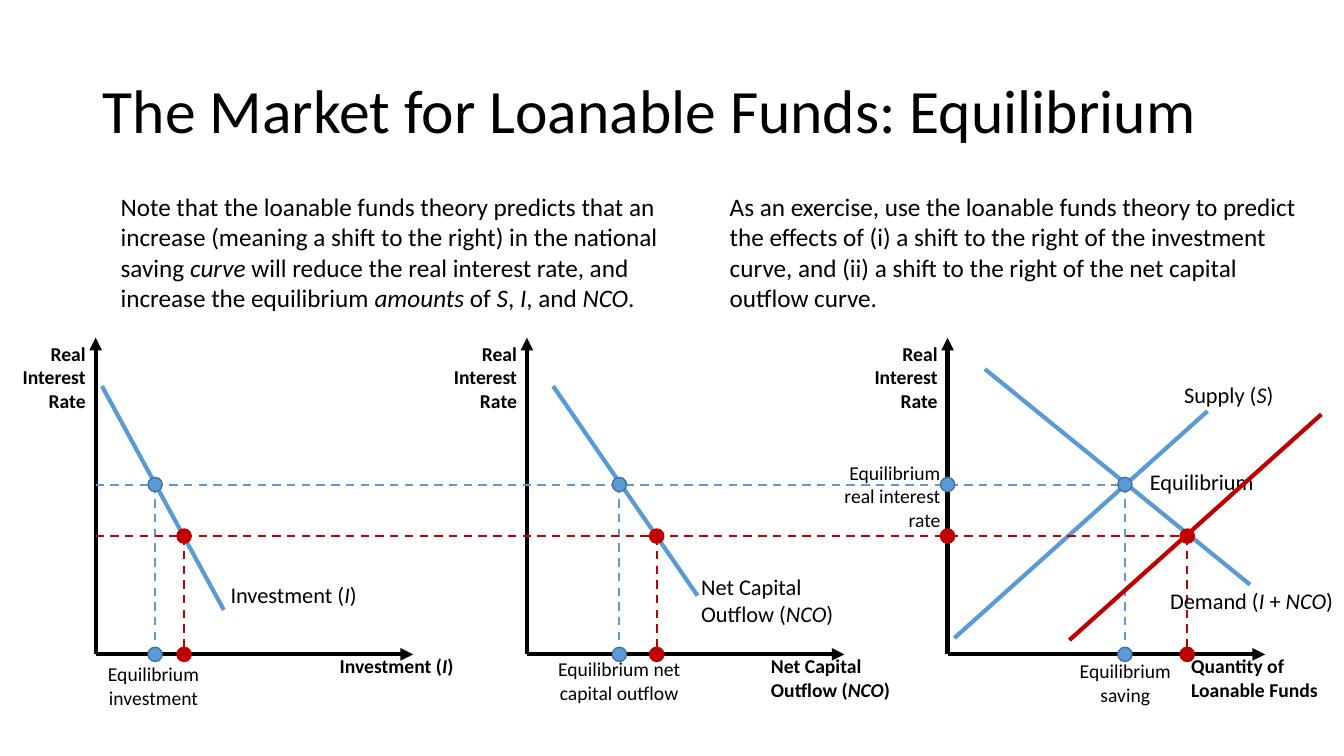
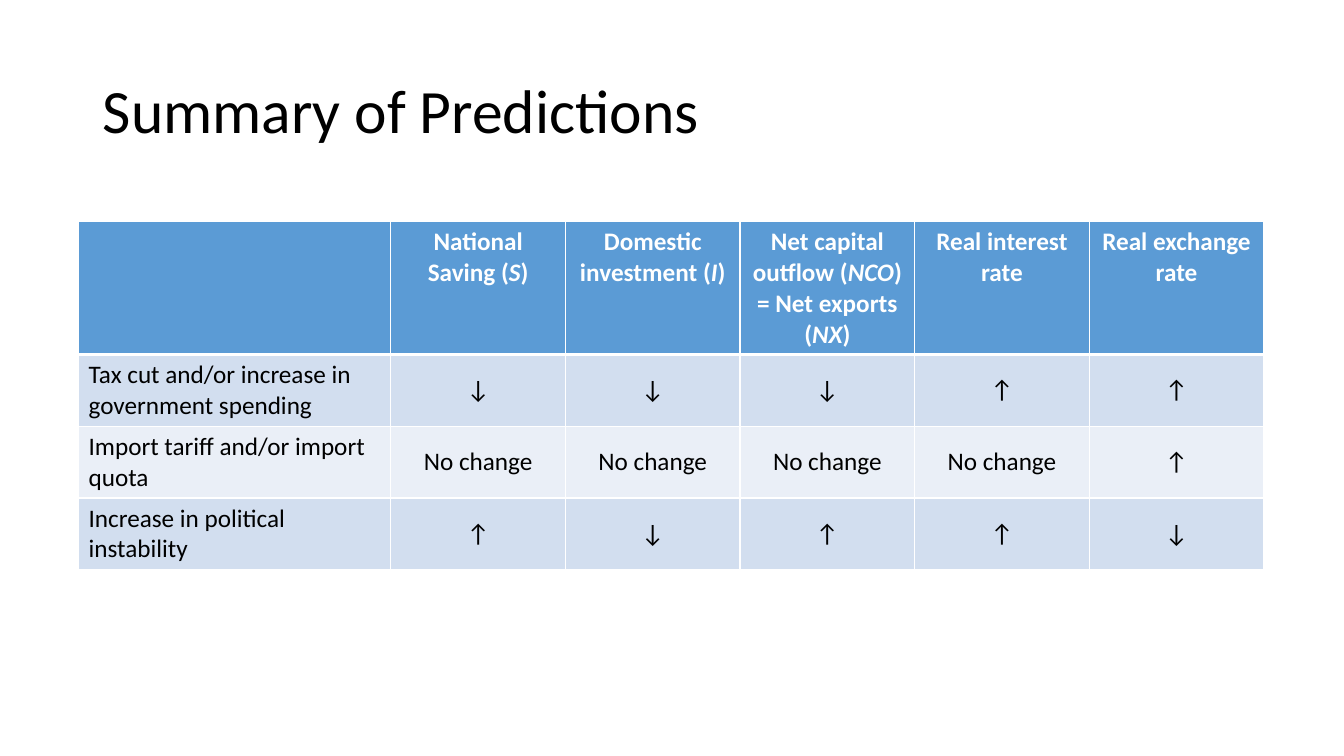
from lxml import etree
from pptx import Presentation
from pptx.dml import color
from pptx.enum import dml, shapes, text
from pptx.oxml import ns
from pptx.util import Cm, Pt

rgb = color.RGBColor.from_string
BLACK, WHITE = "000000", "FFFFFF"
BLUE, DARK_BLUE, RED = "5B9BD5", "43739E", "C00000"
BANDS = ["D2DEEF", "EAEFF7"]
FONT = "Calibri"
LEFT, CENTER, RIGHT = text.PP_ALIGN.LEFT, text.PP_ALIGN.CENTER, text.PP_ALIGN.RIGHT
MIDDLE = text.MSO_ANCHOR.MIDDLE


def write(frame, marked, size, align=LEFT, bold=False, ink=BLACK):
    """Fill a text frame; words between asterisks become italic."""
    frame.word_wrap = True
    paragraph = frame.paragraphs[0]
    paragraph.alignment = align
    font = paragraph.font
    font.name, font.size, font.bold = FONT, Pt(size), bold
    font.color.rgb = rgb(ink)
    for index, piece in enumerate(marked.split("*")):
        if piece:
            run = paragraph.add_run()
            run.text = piece
            if index % 2:
                run.font.italic = True


def draw_line(start, end, ink, width=3, dashed=False, arrow=False):
    line = slide.shapes.add_connector(
        shapes.MSO_CONNECTOR.STRAIGHT, *[Cm(value) for value in (*start, *end)])
    line.line.color.rgb = rgb(ink)
    line.line.width = Pt(width)
    if dashed:
        line.line.dash_style = dml.MSO_LINE.DASH
    properties = line._element.spPr
    if arrow:
        outline = properties.find(ns.qn("a:ln"))
        etree.SubElement(outline, ns.qn("a:tailEnd"), type="triangle")
    etree.SubElement(properties, ns.qn("a:effectLst"))


presentation = Presentation()
presentation.slide_width, presentation.slide_height = Cm(33.87), Cm(19.05)

# Both slides with their titles
slides = []
for title in ["The Market for Loanable Funds: Equilibrium", "Summary of Predictions"]:
    slide = presentation.slides.add_slide(presentation.slide_layouts[6])
    slides.append(slide)
    frame = slide.shapes.add_textbox(Cm(2.34), Cm(1.02), Cm(29.21), Cm(3.68)).text_frame
    write(frame, title, 44)
    frame.vertical_anchor = MIDDLE
    frame.paragraphs[0].line_spacing = 0.9

# Slide 1: three diagrams on a common interest rate scale
slide = slides[0]
AXES_X = [2.41, 13.28, 23.88]
AXIS_TOP, BASE, AXIS_LENGTH = 8.51, 16.49, 8.0
DOT = 0.36
OLD_RATE, NEW_RATE = 12.21, 13.51
OLD_QUANTITIES = [3.91, 15.61, 28.35]
NEW_QUANTITIES = [4.64, 16.55, 29.92]

# Axes
for axis_x in AXES_X:
    draw_line((axis_x, BASE), (axis_x + AXIS_LENGTH, BASE), BLACK, arrow=True)
    draw_line((axis_x, BASE), (axis_x, AXIS_TOP), BLACK, arrow=True)

# Original curves: demand, net capital outflow, investment, supply
for start, end in [
    ((24.82, 9.3), (31.5, 14.73)),
    ((13.94, 9.73), (17.58, 15.01)),
    ((2.57, 9.73), (5.64, 15.37)),
    ((24.05, 16.08), (30.43, 10.36)),
]:
    draw_line(start, end, BLUE)

# Equilibrium guides
for rate, quantities, ink in [(OLD_RATE, OLD_QUANTITIES, BLUE),
                              (NEW_RATE, NEW_QUANTITIES, RED)]:
    draw_line((AXES_X[0], rate), (quantities[-1], rate), ink, 1.5, dashed=True)
    for quantity in quantities:
        draw_line((quantity, rate), (quantity, BASE), ink, 1.5, dashed=True)

# Labels: text, size, bold, alignment, inset, box
labels = [("Real Interest Rate", 14, True, RIGHT, 0.25, (axis_x - 2.21, 8.48, 2.21, 2.06))
          for axis_x in AXES_X]
labels += [(label, 14, True, LEFT, 0, (left, 16.48, 3.26, height)) for label, left, height in [
    ("Investment (*I*)", 8.56, 0.6),
    ("Net Capital Outflow (*NCO*)", 19.43, 1.19),
    ("Quantity of Loanable Funds", 30.02, 1.19),
]]
labels += [(label, 16, False, LEFT, 0.25, box) for label, box in [
    ("Supply (*S*)", (29.59, 9.47, 3.38, 0.94)),
    ("Demand (*I* + *NCO*)", (29.24, 14.68, 4.63, 0.94)),
    ("Equilibrium", (28.73, 11.68, 3.38, 0.94)),
    ("Net Capital Outflow (*NCO*)", (17.42, 14.33, 3.89, 1.63)),
    ("Investment (*I*)", (5.56, 14.53, 3.91, 0.94)),
]]
labels += [(label, 14, False, align, 0.25, box) for label, align, box in [
    ("Equilibrium real interest rate", RIGHT, (20.57, 11.48, 3.38, 2.06)),
    ("Equilibrium saving", CENTER, (26.67, 16.48, 3.38, 1.45)),
    ("Equilibrium net capital outflow", CENTER, (13.61, 16.43, 3.99, 1.45)),
    ("Equilibrium investment", CENTER, (2.18, 16.56, 3.38, 1.45)),
]]
labels += [(label, 18, False, LEFT, 0.25, (left, 4.7, 15.06, 3.33)) for label, left in [
    ("Note that the loanable funds theory predicts that an increase (meaning a shift "
     "to the right) in the national saving *curve* will reduce the real interest rate, "
     "and increase the equilibrium *amounts* of *S*, *I*, and *NCO*.", 2.79),
    ("As an exercise, use the loanable funds theory to predict the effects of (i) a "
     "shift to the right of the investment curve, and (ii) a shift to the right of the "
     "net capital outflow curve.", 18.14),
]]
for label, size, bold, align, inset, box in labels:
    frame = slide.shapes.add_textbox(*[Cm(value) for value in box]).text_frame
    frame.margin_left = frame.margin_right = Cm(inset)
    frame.margin_top = frame.margin_bottom = Cm(inset / 2)
    write(frame, label, size, align, bold)

# Shifted supply curve
draw_line((26.95, 16.13), (33.3, 10.44), RED)

# Dots at the equilibria and on the axes
for rate, quantities, ink, edge in [(OLD_RATE, OLD_QUANTITIES, BLUE, DARK_BLUE),
                                    (NEW_RATE, NEW_QUANTITIES, RED, RED)]:
    points = [(quantity, y) for quantity in quantities for y in (rate, BASE)]
    for x, y in points + [(AXES_X[2], rate)]:
        dot = slide.shapes.add_shape(shapes.MSO_SHAPE.OVAL, Cm(x - DOT / 2),
                                     Cm(y - DOT / 2), Cm(DOT), Cm(DOT))
        dot.shadow.inherit = False
        dot.fill.solid()
        dot.fill.fore_color.rgb = rgb(ink)
        dot.line.color.rgb = rgb(edge)
        dot.line.width = Pt(1)

# Slide 2: table of predictions
UP, DOWN, SAME = "↑", "↓", "No change"
rows = [
    ["", "National Saving (*S*)", "Domestic investment (*I*)",
     "Net capital outflow (*NCO*) = Net exports (*NX*)",
     "Real interest rate", "Real exchange rate"],
    ["Tax cut and/or increase in government spending", DOWN, DOWN, DOWN, UP, UP],
    ["Import tariff and/or import quota", SAME, SAME, SAME, SAME, UP],
    ["Increase in political instability", UP, DOWN, UP, UP, DOWN],
]
widths = [7.87] + [4.4] * 5
heights = [3.34] + [1.81] * 3
table = slides[1].shapes.add_table(len(rows), len(widths), Cm(1.98), Cm(5.59),
                                   Cm(sum(widths)), Cm(sum(heights))).table
for column, width in zip(table.columns, widths):
    column.width = Cm(width)
for row_index, (row, height) in enumerate(zip(rows, heights)):
    table.rows[row_index].height = Cm(height)
    header = row_index == 0
    for column_index, entry in enumerate(row):
        cell = table.cell(row_index, column_index)
        write(cell.text_frame, entry, 18, CENTER if column_index else LEFT,
              header, WHITE if header else BLACK)
        if not header:
            cell.vertical_anchor = MIDDLE
        # White borders, thicker under the header
        thick_side = {0: "lnB", 1: "lnT"}.get(row_index)
        properties = cell._tc.get_or_add_tcPr()
        for side in ("lnL", "lnR", "lnT", "lnB"):
            border = etree.SubElement(properties, ns.qn(f"a:{side}"),
                                      w=str(Pt(3 if side == thick_side else 1)))
            fill = etree.SubElement(border, ns.qn("a:solidFill"))
            etree.SubElement(fill, ns.qn("a:srgbClr"), val=WHITE)
        cell.fill.solid()
        cell.fill.fore_color.rgb = rgb(BLUE if header else BANDS[(row_index - 1) % 2])

presentation.save("out.pptx")
